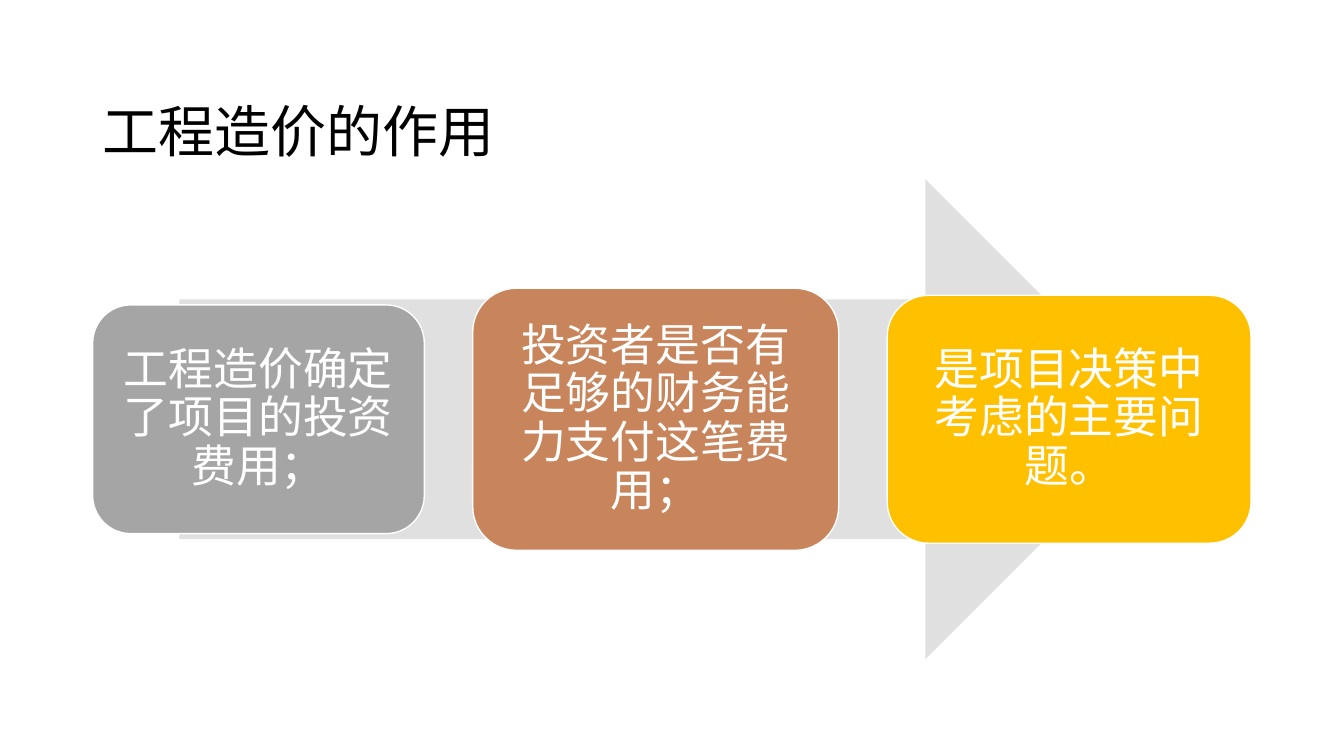
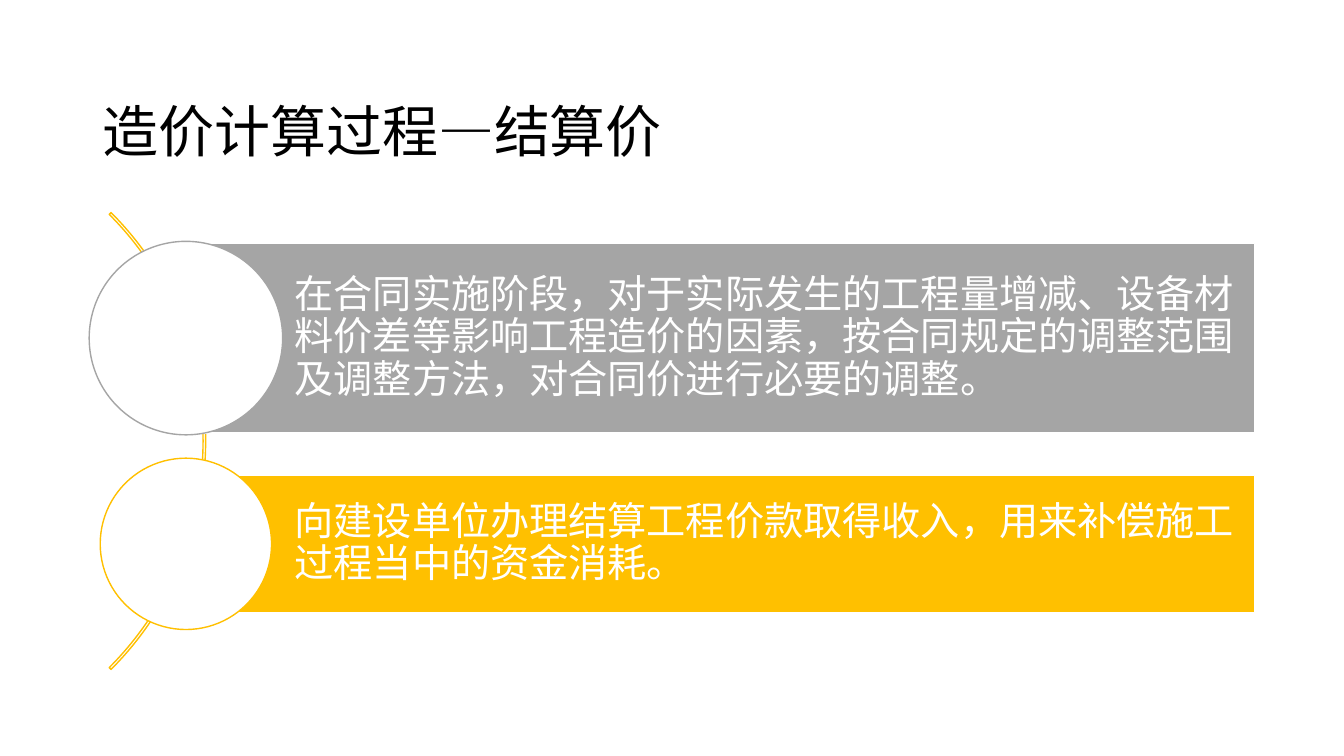
from pptx import Presentation
from pptx import util as u
from pptx.dml.color import RGBColor
from pptx.enum import shapes, text
from lxml import etree

COLORS = {
    "black": "000000",
    "white": "FFFFFF",
    "arrow": "E0E0E0",
    "gray": "A5A5A5",
    "copper": "C8855C",
    "gold": "FFC000",
}
TITLE_FONT = "Times New Roman"
BODY_FONT = "Noto Sans CJK SC"
SHAPE = shapes.MSO_SHAPE
ALIGN = text.PP_ALIGN


def color(name):
    return RGBColor.from_string(COLORS[name])


def set_text(item, words, size, font, tint, align, spacing):
    """Write one vertically centred paragraph; Chinese is set in the body font."""
    frame = item.text_frame
    frame.text = words
    frame.word_wrap = True
    frame.auto_size = text.MSO_AUTO_SIZE.NONE
    frame.vertical_anchor = text.MSO_ANCHOR.MIDDLE
    para = frame.paragraphs[0]
    para.alignment = align
    para.line_spacing = spacing
    span = para.runs[0]
    span.font.size = u.Pt(size)
    span.font.name = font
    span.font.color.rgb = color(tint)
    latin = span.font._element.find("{*}latin")
    east_asian = etree.Element(latin.tag.replace("latin", "ea"), typeface=BODY_FONT)
    latin.addnext(east_asian)


def set_margins(box, left, other):
    frame = box.text_frame
    frame.margin_left = u.Pt(left)
    frame.margin_top = frame.margin_right = frame.margin_bottom = u.Pt(other)


def add_page(deck, title):
    page = deck.slides.add_slide(deck.slide_layouts[5])
    heading = page.shapes.title
    heading.left, heading.top = u.Pt(66), u.Pt(29)
    heading.width, heading.height = u.Pt(828), u.Pt(104)
    set_text(heading, title, 40, TITLE_FONT, "black", ALIGN.LEFT, 1.5)
    return page


def add_box(page, kind, left, middle, width, height, fill=None, line=None):
    """Place a preset shape by its left edge and its vertical middle."""
    box = page.shapes.add_shape(
        kind, u.Pt(left), u.Pt(middle - height / 2), u.Pt(width), u.Pt(height))
    box.shadow.inherit = False
    if fill:
        box.fill.solid()
        box.fill.fore_color.rgb = color(fill)
    else:
        box.fill.background()
    if line:
        box.line.color.rgb = color(line)
        box.line.width = u.Pt(1)
    else:
        box.line.fill.background()
    return box


def add_process(page, cards):
    """Cards in a row with equal gaps, on a wide arrow."""
    middle, left, gap = 299.5, 66.2, 34.6
    add_box(page, SHAPE.RIGHT_ARROW, 128.2, middle, 704.2, 342.7, "arrow")
    for words, width, height, fill in cards:
        card = add_box(page, SHAPE.ROUNDED_RECTANGLE, left, middle,
                       width, height, fill, "white")
        set_margins(card, 10, 10)
        set_text(card, words, 32, BODY_FONT, "white", ALIGN.CENTER, 0.9)
        left += width + gap


def add_curved_list(page, items):
    """Bars that start at the centres of circles, strung on an arc."""
    axis, bar_width = 132.8, 763.4
    arc = add_box(page, SHAPE.BLOCK_ARC, -314.6, 315, 461.5, 461.5, line="gold")
    for index, value in enumerate((189, 27, 0.004)):
        arc.adjustments[index] = value
    for words, middle, height, diameter, tint in items:
        bar = add_box(page, SHAPE.RECTANGLE, axis, middle,
                      bar_width, height, tint, "white")
        set_margins(bar, 77.6, 5.8)
        set_text(bar, words, 28, BODY_FONT, "white", ALIGN.LEFT, 0.9)
        add_box(page, SHAPE.OVAL, axis - diameter / 2, middle,
                diameter, diameter, "white", tint)


def main():
    deck = Presentation()
    deck.slide_width, deck.slide_height = u.Pt(960), u.Pt(540)

    # Purpose of the project cost
    page = add_page(deck, "工程造价的作用")
    add_process(page, [
        ("工程造价确定了项目的投资费用；", 236.9, 163.4, "gray"),
        ("投资者是否有足够的财务能力支付这笔费用；", 261.4, 187.2, "copper"),
        ("是项目决策中考虑的主要问题。", 259.9, 177.1, "gold"),
    ])

    # Settlement price
    page = add_page(deck, "造价计算过程—结算价")
    add_curved_list(page, [
        ("在合同实施阶段，对于实际发生的工程量增减、设备材料价差等影响工程造价的因素，"
         "按合同规定的调整范围及调整方法，对合同价进行必要的调整。",
         241.5, 135.4, 138.2, "gray"),
        ("向建设单位办理结算工程价款取得收入，用来补偿施工过程当中的资金消耗。",
         388.5, 97.9, 122.4, "gold"),
    ])

    deck.save("out.pptx")


if __name__ == "__main__":
    main()
